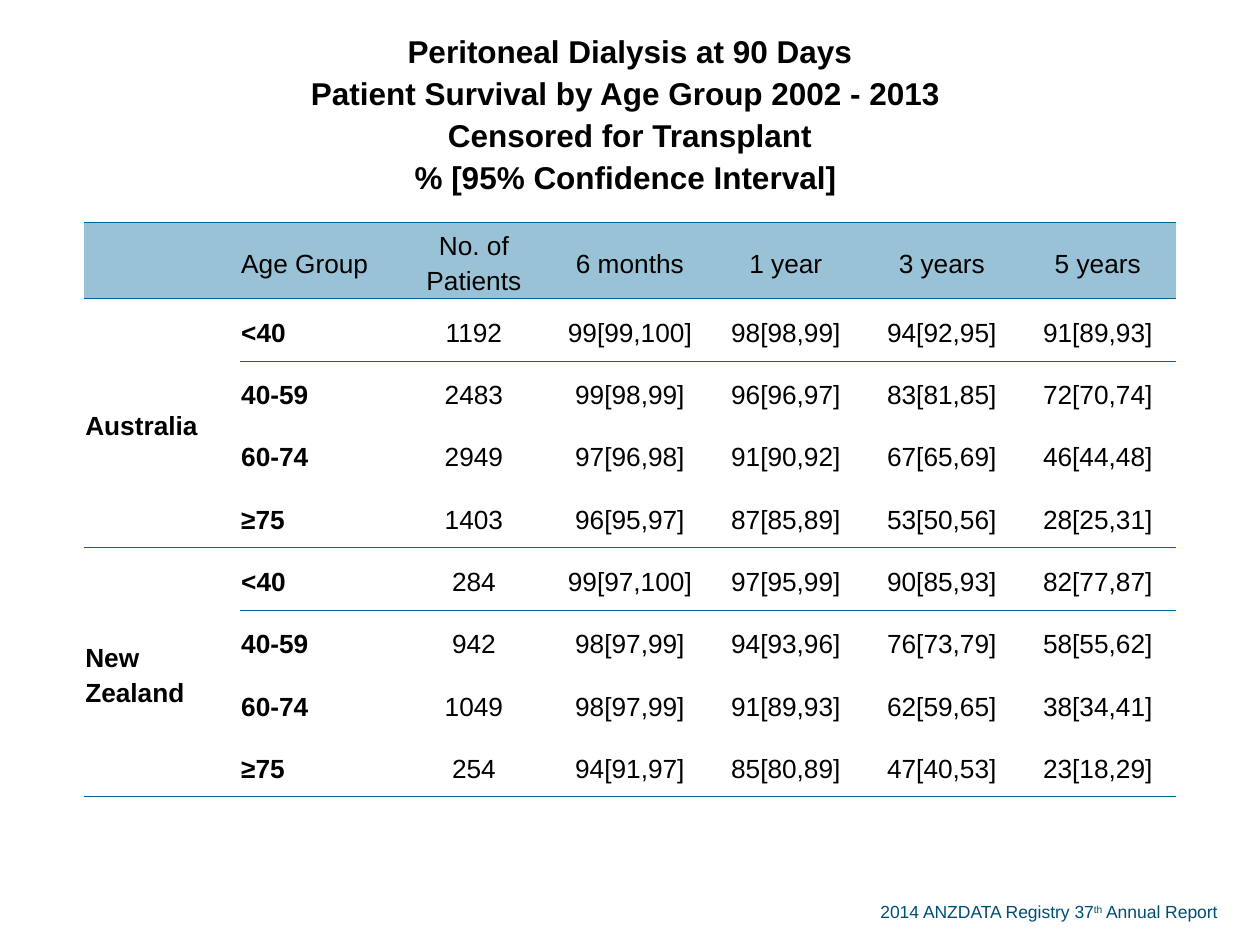
from lxml import etree
from pptx import Presentation
from pptx.dml.color import RGBColor
from pptx.enum.text import MSO_ANCHOR, PP_ALIGN
from pptx.oxml.ns import qn
from pptx.util import Pt

MIDDLE = MSO_ANCHOR.MIDDLE
LEFT, CENTER = PP_ALIGN.LEFT, PP_ALIGN.CENTER

BLACK = RGBColor(0x00, 0x00, 0x00)
NAVY = RGBColor(0x00, 0x4D, 0x73)
RULE = RGBColor(0x00, 0x66, 0x99)
BAND = RGBColor(0x99, 0xC2, 0xD6)
FONT = "Arial"
PLAIN = "{2D5ABB26-0587-4C30-8999-92F81FD0307C}"

TITLE = [
    ["Peritoneal Dialysis at 90 Days"],
    ["Patient Survival by Age Group 2002 - 2013 ",
     "Censored for Transplant",
     "% [95% Confidence Interval] "],
]
HEADS = ["Age Group", "No. of Patients", "6 months", "1 year", "3 years", "5 years"]
GROUPS = {
    "Australia": [
        ["<40", "1192", "99[99,100]", "98[98,99]", "94[92,95]", "91[89,93]"],
        ["40-59", "2483", "99[98,99]", "96[96,97]", "83[81,85]", "72[70,74]"],
        ["60-74", "2949", "97[96,98]", "91[90,92]", "67[65,69]", "46[44,48]"],
        ["≥75", "1403", "96[95,97]", "87[85,89]", "53[50,56]", "28[25,31]"],
    ],
    "New Zealand": [
        ["<40", "284", "99[97,100]", "97[95,99]", "90[85,93]", "82[77,87]"],
        ["40-59", "942", "98[97,99]", "94[93,96]", "76[73,79]", "58[55,62]"],
        ["60-74", "1049", "98[97,99]", "91[89,93]", "62[59,65]", "38[34,41]"],
        ["≥75", "254", "94[91,97]", "85[80,89]", "47[40,53]", "23[18,29]"],
    ],
}
COLS = len(HEADS) + 1
SIZE = len(GROUPS["Australia"])
TITLE_H, HEAD_H, ROW_H = 127.2, 43.4, 35.6


def add_run(para, text, size, color=BLACK, bold=False):
    run = para.add_run()
    run.text = text
    run.font.name = FONT
    run.font.size = Pt(size)
    run.font.bold = bold
    run.font.color.rgb = color
    return run


def fill_cell(cell, paras, size=15, bold=False, align=CENTER):
    cell.vertical_anchor = MIDDLE
    cell.margin_left = cell.margin_right = cell.margin_top = Pt(0.75)
    cell.margin_bottom = Pt(0)
    frame = cell.text_frame
    for i, lines in enumerate(paras):
        para = frame.add_paragraph() if i else frame.paragraphs[0]
        para.alignment = align
        para.line_spacing = 1.19
        for j, line in enumerate(lines):
            if j:
                para.add_line_break()
            add_run(para, line, size, bold=bold)


def add_edge(cell, tag):
    line = etree.SubElement(cell._tc.get_or_add_tcPr(), qn(tag), w=str(Pt(0.5)))
    fill = etree.SubElement(line, qn("a:solidFill"))
    etree.SubElement(fill, qn("a:srgbClr"), val=str(RULE))


def rule_rows(table):
    last = len(table.rows) - 1
    ends = {0, 1, *range(1 + SIZE, last + 1, SIZE)}
    for r in range(last + 1):
        for c in range(COLS):
            cell = table.cell(r, c)
            if r - 1 in ends:
                add_edge(cell, "a:lnT")
            if r in ends or (c == 0 and r - 1 in ends):
                add_edge(cell, "a:lnB")
            if r == 1:
                cell.fill.solid()
                cell.fill.fore_color.rgb = BAND
            else:
                cell.fill.background()


def add_grid(slide, left, top, width):
    count = 2 + SIZE * len(GROUPS)
    height = TITLE_H + HEAD_H + ROW_H * (count - 2)
    table = slide.shapes.add_table(
        count, COLS, Pt(left), Pt(top), Pt(width), Pt(height)).table
    table.first_row = table.horz_banding = False
    table._tbl.tblPr.find(qn("a:tableStyleId")).text = PLAIN
    for col in table.columns:
        col.width = Pt(width / COLS)
    for r, row in enumerate(table.rows):
        row.height = Pt((TITLE_H, HEAD_H)[r] if r < 2 else ROW_H)

    rule_rows(table)
    table.cell(0, 0).merge(table.cell(0, COLS - 1))
    fill_cell(table.cell(0, 0), TITLE, 18, True)
    for c, head in enumerate(HEADS, 1):
        fill_cell(table.cell(1, c), [[head]], align=LEFT if c == 1 else CENTER)
    for g, (name, rows) in enumerate(GROUPS.items()):
        start = 2 + g * SIZE
        table.cell(start, 0).merge(table.cell(start + SIZE - 1, 0))
        fill_cell(table.cell(start, 0), [[name]], bold=True, align=LEFT)
        for r, row in enumerate(rows, start):
            for c, text in enumerate(row, 1):
                first = c == 1
                fill_cell(table.cell(r, c), [[text]], bold=first,
                          align=LEFT if first else CENTER)


def add_foot(slide, left, top, width, height):
    box = slide.shapes.add_textbox(Pt(left), Pt(top), Pt(width), Pt(height))
    para = box.text_frame.paragraphs[0]
    add_run(para, "2014 ANZDATA Registry 37", 10, NAVY)
    sup = add_run(para, "th", 10, NAVY)
    sup.font._element.set("baseline", "30000")
    add_run(para, " Annual Report", 10, NAVY)


def main():
    deck = Presentation()
    deck.slide_width, deck.slide_height = Pt(720), Pt(540)
    slide = deck.slides.add_slide(deck.slide_layouts[6])
    add_foot(slide, 496, 511.2, 215.2, 19.4)
    add_grid(slide, 48, 0, 624)
    deck.save("out.pptx")


if __name__ == "__main__":
    main()
